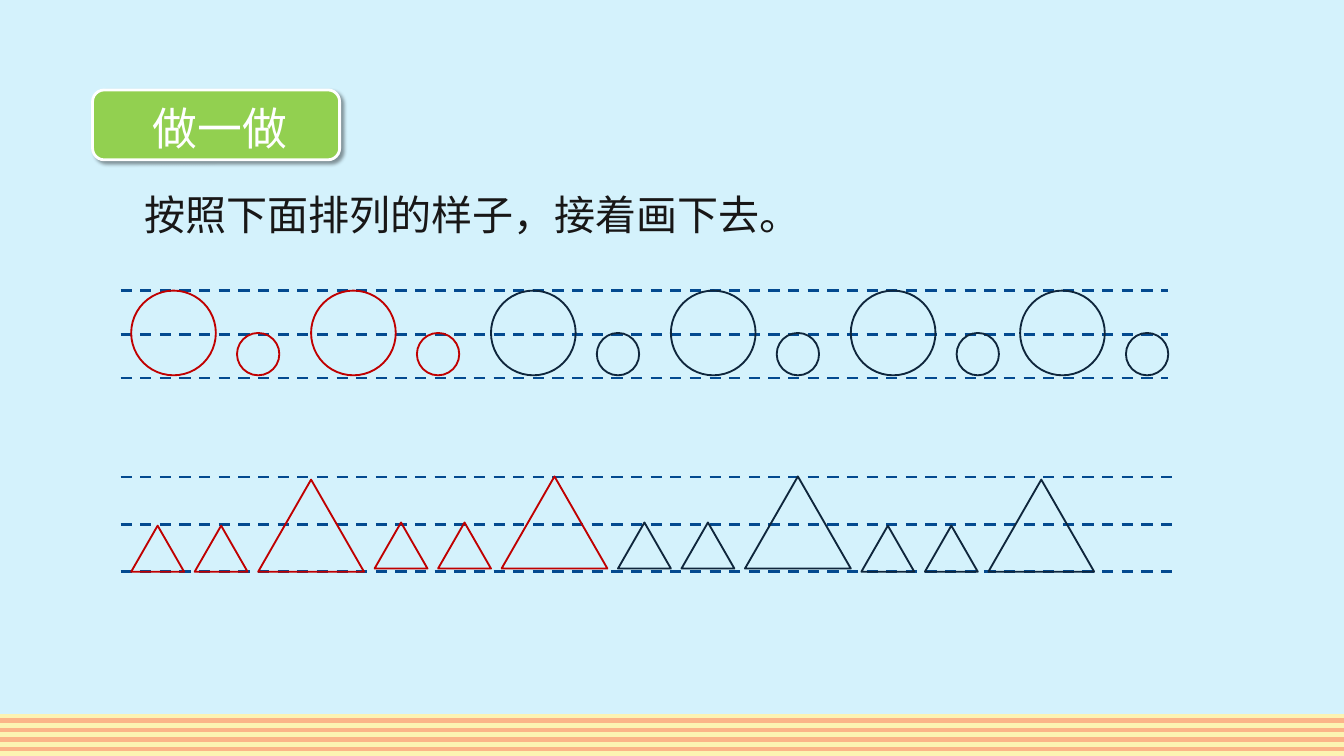
import dataclasses

import pptx
import pptx.dml.color
import pptx.enum.dml
import pptx.enum.shapes
import pptx.enum.text
import pptx.oxml.ns
import pptx.util
from lxml import etree

Cm = pptx.util.Cm
Pt = pptx.util.Pt
SHAPE = pptx.enum.shapes.MSO_SHAPE
ANCHOR = pptx.enum.text.MSO_ANCHOR
ALIGN = pptx.enum.text.PP_ALIGN
qn = pptx.oxml.ns.qn

FONT = "Noto Sans CJK SC"
COLOURS = {
    "sky": "D4F2FC",
    "band": "FCF3B2",
    "stripe": "FBB488",
    "guide": "034A90",
    "given": "C00000",
    "answer": "0F263C",
    "badge": "92D050",
    "white": "FFFFFF",
    "text": "181717",
    "shadow": "000000",
}


@dataclasses.dataclass
class Box:
    """A region of the slide, in centimetres."""
    left: float
    top: float
    width: float
    height: float

    def lengths(self):
        return [Cm(value) for value in dataclasses.astuple(self)]


def rgb(name):
    return pptx.dml.color.RGBColor.from_string(COLOURS[name])


def add_figure(page, kind, box, fill=None, line=None, weight=1):
    figure = page.shapes.add_shape(kind, *box.lengths())
    figure.shadow.inherit = False
    if fill:
        figure.fill.solid()
        figure.fill.fore_color.rgb = rgb(fill)
    else:
        figure.fill.background()
    if line:
        figure.line.color.rgb = rgb(line)
        figure.line.width = Pt(weight)
    else:
        figure.line.fill.background()
    return figure


def add_rule(page, left, top, width, colour, weight, dashed=False):
    rule = page.shapes.add_connector(
        pptx.enum.shapes.MSO_CONNECTOR.STRAIGHT,
        Cm(left), Cm(top), Cm(left + width), Cm(top))
    rule.line.color.rgb = rgb(colour)
    rule.line.width = Pt(weight)
    if dashed:
        rule.line.dash_style = pptx.enum.dml.MSO_LINE.DASH
    etree.SubElement(rule._element.spPr, qn("a:effectLst"))


def fill_placeholder(holder, box, text, size, colour, align, anchor, inset):
    holder.left, holder.top, holder.width, holder.height = box.lengths()
    frame = holder.text_frame
    frame.word_wrap = True
    frame.auto_size = pptx.enum.text.MSO_AUTO_SIZE.NONE
    frame.vertical_anchor = anchor
    frame.margin_left = frame.margin_right = Cm(0.25)
    frame.margin_top = frame.margin_bottom = Cm(inset)
    para = frame.paragraphs[0]
    para.alignment = align
    para.space_before = Pt(0)
    span = para.add_run()
    span.text = text
    span.font.size = Pt(size)
    span.font.color.rgb = rgb(colour)
    span.font.name = FONT
    etree.SubElement(span.font._element, qn("a:ea"), typeface=FONT)
    return para


def add_backdrop(page, band):
    page.background.fill.solid()
    page.background.fill.fore_color.rgb = rgb("sky")
    add_figure(page, SHAPE.RECTANGLE, band, fill="band")
    for number in range(4):
        add_rule(page, band.left, band.top + 0.12 + 0.18 * number,
                 band.width, "stripe", 2.25)


def add_badge(page, box):
    """Draw the green label and lay the slide title over it."""
    badge = add_figure(page, SHAPE.ROUNDED_RECTANGLE, box,
                       "badge", "white", 1.5)
    effects = badge._element.spPr.find(qn("a:effectLst"))
    shadow = etree.SubElement(
        effects, qn("a:outerShdw"), blurRad=str(Pt(2)), dist=str(Pt(2)),
        dir="2700000", algn="tl", rotWithShape="0")
    shade = etree.SubElement(shadow, qn("a:srgbClr"), val=COLOURS["shadow"])
    etree.SubElement(shade, qn("a:alpha"), val="40000")

    title = page.shapes.title
    para = fill_placeholder(
        title, Box(box.left + 0.38, box.top + 0.03, 4.06, 1.22),
        "做一做", 24, "white", ALIGN.CENTER, ANCHOR.TOP, 0.13)
    para.line_spacing = 1.05
    page.shapes._spTree.append(title._element)


def add_instruction(page, box):
    para = fill_placeholder(
        page.placeholders[1], box, "按照下面排列的样子，接着画下去。",
        22, "text", ALIGN.LEFT, ANCHOR.MIDDLE, 0)
    properties = para._p.get_or_add_pPr()
    properties.set("marL", "0")
    properties.set("indent", "0")
    etree.SubElement(properties, qn("a:buNone"))


def add_guides(page, box):
    for step in range(3):
        add_rule(page, box.left, box.top + step * box.height / 2,
                 box.width, "guide", 1.5, dashed=True)


def pen(group):
    """The first two groups are given; the rest are the answer."""
    return "given" if group < 2 else "answer"


def add_circle_row(page, box):
    add_guides(page, box)
    big, small = 1.6, 0.8
    for group, offset in enumerate([0.2, 3.6, 7, 10.4, 13.8, 17]):
        left = box.left + offset
        for shift, size in [(0, big), (2, small)]:
            add_figure(page, SHAPE.OVAL,
                       Box(left + shift, box.top + big - size, size, size),
                       line=pen(group))


def add_triangle_row(page, box):
    add_guides(page, box)
    pitch = 4.6
    for group, lift in enumerate([0, 0.06, 0.06, 0]):
        left = box.left + 0.2 + pitch * group
        base = box.top + box.height - lift
        for shift, width in [(0, 1), (1.2, 1), (2.4, 2)]:
            height = 0.87 * width
            add_figure(page, SHAPE.ISOSCELES_TRIANGLE,
                       Box(left + shift, base - height, width, height),
                       line=pen(group))


def main():
    deck = pptx.Presentation()
    deck.slide_width, deck.slide_height = Cm(25.4), Cm(14.28)
    page = deck.slides.add_slide(deck.slide_layouts[1])
    add_backdrop(page, Box(0, 13.49, 25.4, 0.79))
    add_instruction(page, Box(2.49, 3.45, 12.8, 1.19))
    add_circle_row(page, Box(2.28, 5.49, 19.8, 1.65))
    add_triangle_row(page, Box(2.28, 9.01, 20, 1.79))
    add_badge(page, Box(1.75, 1.7, 4.67, 1.32))
    deck.save("out.pptx")


if __name__ == "__main__":
    main()
